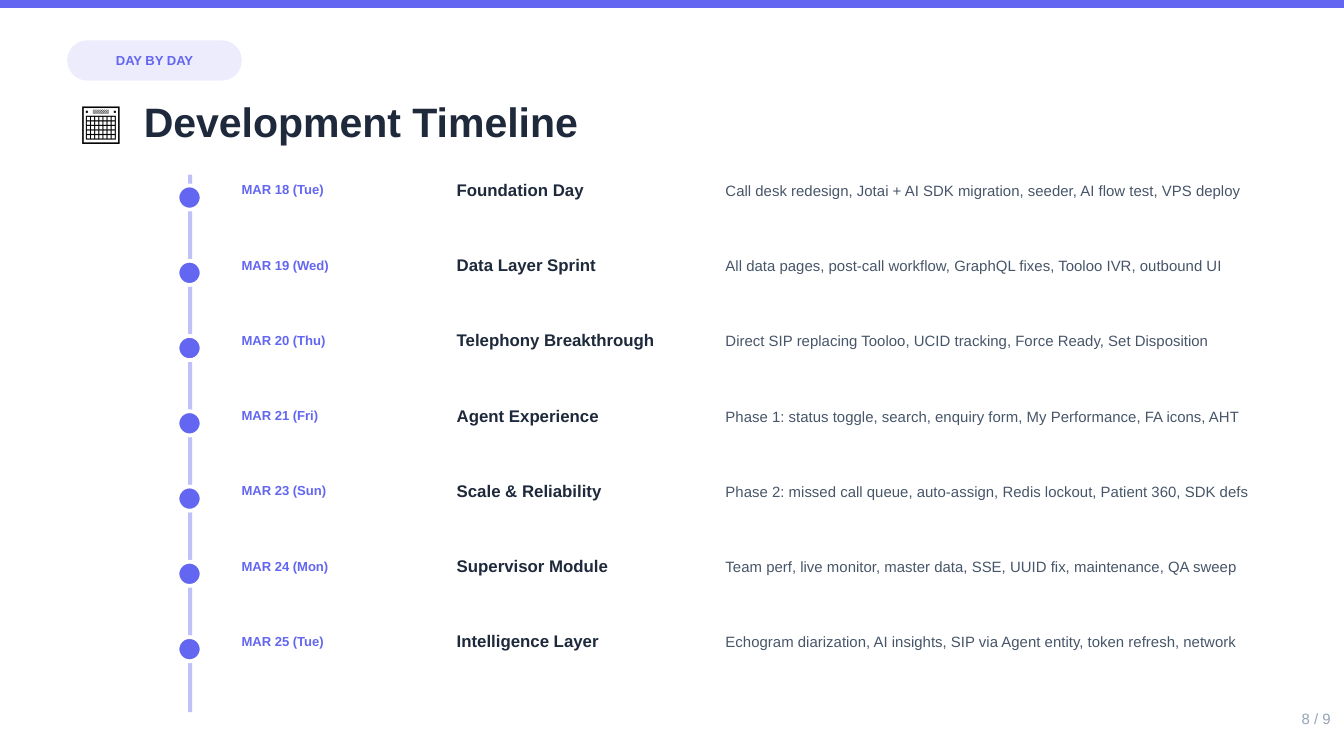
from lxml import etree
from pptx import Presentation
from pptx.dml.color import RGBColor
from pptx.enum.shapes import MSO_SHAPE
from pptx.enum.text import MSO_ANCHOR, PP_ALIGN
from pptx.oxml.ns import qn
from pptx.util import Inches, Pt

RECT, PILL, DOT = MSO_SHAPE.RECTANGLE, MSO_SHAPE.ROUNDED_RECTANGLE, MSO_SHAPE.OVAL
TOP, MID = MSO_ANCHOR.TOP, MSO_ANCHOR.MIDDLE
LEFT, MIDDLE, RIGHT = PP_ALIGN.LEFT, PP_ALIGN.CENTER, PP_ALIGN.RIGHT
FONT = "Arial"
HEX = {"accent": "6366F1", "dark": "1E293B", "body": "475569",
       "page": "94A3B8", "black": "000000", "white": "FFFFFF"}
RGB = {name: RGBColor.from_string(code) for name, code in HEX.items()}

WIDTH = 10
HEIGHT = WIDTH * 9 / 16
START, STEP = 1.3, 0.56      # first row and row pitch
DATE, HEAD, NOTE, END = 1.7, 3.3, 5.3, 9.5      # column edges
DAYS = [
    ("MAR 18 (Tue)", "Foundation Day",
     "Call desk redesign, Jotai + AI SDK migration, seeder, AI flow test, VPS deploy"),
    ("MAR 19 (Wed)", "Data Layer Sprint",
     "All data pages, post-call workflow, GraphQL fixes, Tooloo IVR, outbound UI"),
    ("MAR 20 (Thu)", "Telephony Breakthrough",
     "Direct SIP replacing Tooloo, UCID tracking, Force Ready, Set Disposition"),
    ("MAR 21 (Fri)", "Agent Experience",
     "Phase 1: status toggle, search, enquiry form, My Performance, FA icons, AHT"),
    ("MAR 23 (Sun)", "Scale & Reliability",
     "Phase 2: missed call queue, auto-assign, Redis lockout, Patient 360, SDK defs"),
    ("MAR 24 (Mon)", "Supervisor Module",
     "Team perf, live monitor, master data, SSE, UUID fix, maintenance, QA sweep"),
    ("MAR 25 (Tue)", "Intelligence Layer",
     "Echogram diarization, AI insights, SIP via Agent entity, token refresh, network"),
]

deck = Presentation()
deck.slide_width, deck.slide_height = Inches(WIDTH), Inches(HEIGHT)
slide = deck.slides.add_slide(deck.slide_layouts[5])


def draw(kind, x, y, w, h, alpha=100):
    """Add an accent shape; alpha is its opacity in percent."""
    shape = slide.shapes.add_shape(kind, Inches(x), Inches(y), Inches(w), Inches(h))
    shape.shadow.inherit = False
    shape.fill.solid()
    shape.fill.fore_color.rgb = RGB["accent"]
    shape.line.fill.background()
    if alpha < 100:
        tint = shape.fill._xPr.find(".//" + qn("a:srgbClr"))
        etree.SubElement(tint, qn("a:alpha")).set("val", str(alpha * 1000))
    return shape


def write(text, x, y, w, h, size, color, bold=False, align=LEFT, anchor=MID):
    box = slide.shapes.add_textbox(Inches(x), Inches(y), Inches(w), Inches(h))
    frame = box.text_frame
    frame.word_wrap = True
    frame.vertical_anchor = anchor
    frame.text = text
    para = frame.paragraphs[0]
    para.alignment = align
    font = para.runs[0].font
    font.name, font.size, font.bold = FONT, Pt(size), bold
    font.color.rgb = RGB[color]


# Header
draw(RECT, 0, 0, WIDTH, 0.06)
badge = draw(PILL, 0.5, 0.3, 1.3, 0.3, alpha=12)
badge.adjustments[0] = 0.5
write("DAY BY DAY", 0.5, 0.3, 1.3, 0.3, 7, "accent", True, MIDDLE)

title = slide.shapes.title
title.left, title.top = Inches(0.5), Inches(0.65)
title.width, title.height = Inches(9), Inches(0.5)
title.text_frame.vertical_anchor = MID
para = title.text_frame.paragraphs[0]
para.alignment = LEFT
tabs = etree.SubElement(para._p.get_or_add_pPr(), qn("a:tabLst"))
etree.SubElement(tabs, qn("a:tab"), pos=str(Inches(0.47)), algn="l")
for text, color, bold in [("📅\t", "black", False), ("Development Timeline", "dark", True)]:
    run = para.add_run()
    run.text = text
    run.font.name, run.font.size, run.font.bold = FONT, Pt(22), bold
    run.font.color.rgb = RGB[color]

# Timeline
draw(RECT, 1.4, START, 0.03, 4, alpha=40)
for row, (date, head, note) in enumerate(DAYS):
    y = START + row * STEP
    dot = draw(DOT, 1.32, y + 0.08, 0.18, 0.18)
    dot.line.color.rgb = RGB["white"]
    dot.line.width = Pt(2)
    write(date, DATE, y, HEAD - DATE, 0.22, 7, "accent", True)
    write(head, HEAD, y, NOTE - HEAD, 0.22, 9, "dark", True)
    write(note, NOTE, y, END - NOTE, 0.45, 8, "body", anchor=TOP)

# Page number
write("8 / 9", WIDTH - 1.2, 5.2, 1.2, 0.3, 8, "page", align=RIGHT)

deck.save("out.pptx")
